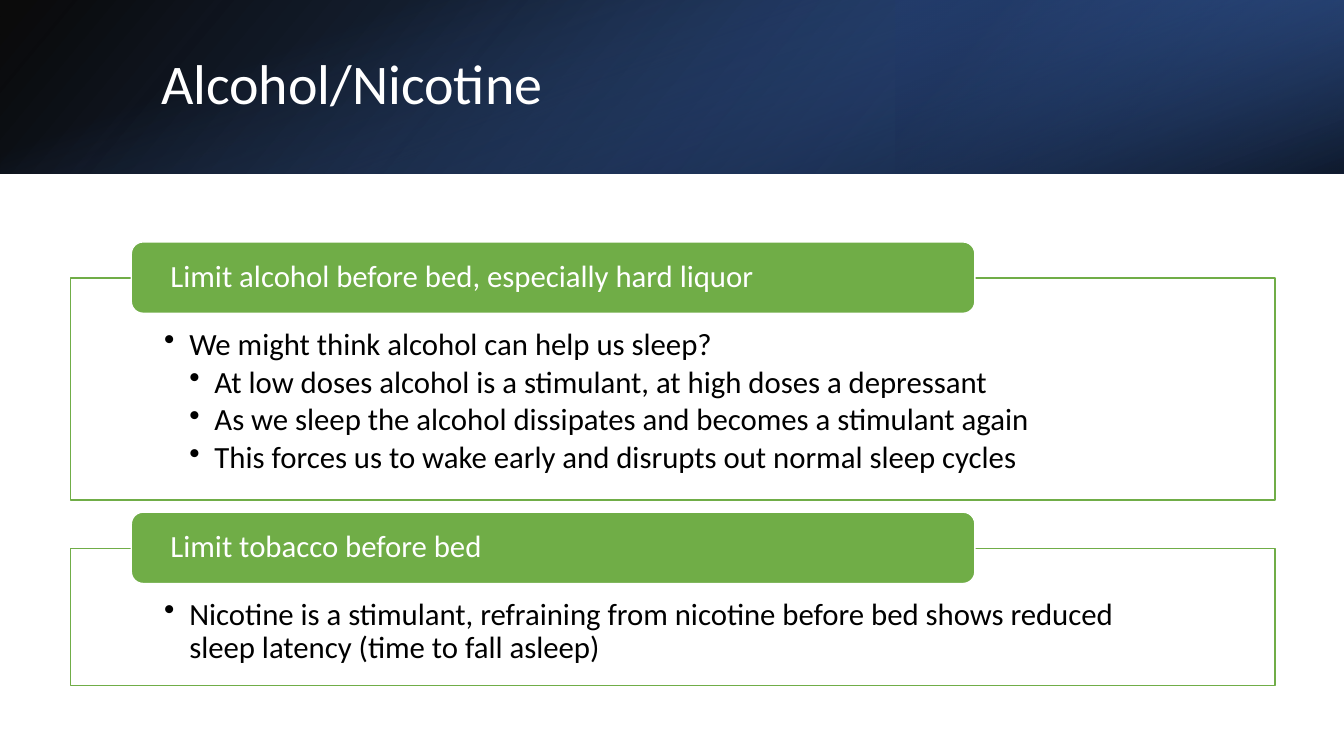
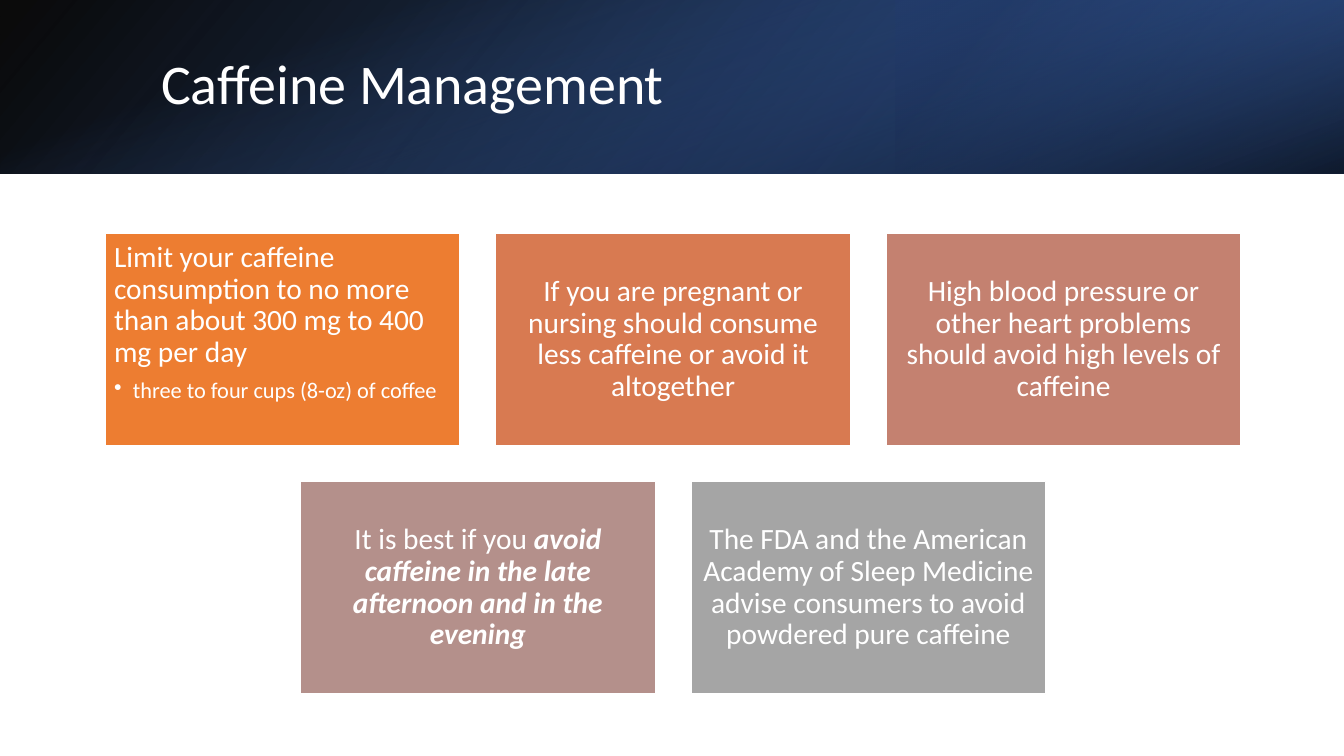
import lxml.etree
import pptx
import pptx.dml.color
import pptx.enum.shapes
import pptx.enum.text
import pptx.oxml.ns
import pptx.util

Pt = pptx.util.Pt
qn = pptx.oxml.ns.qn
rgb = pptx.dml.color.RGBColor.from_string
KIND = pptx.enum.shapes.MSO_SHAPE
ALIGN = pptx.enum.text.PP_ALIGN
ANCHOR = pptx.enum.text.MSO_ANCHOR

FONT = "Calibri"
WHITE, BLACK, GREEN = "FFFFFF", "000000", "70AD47"
WIDE, HIGH, BAND = 960, 540, 124

# Title band layers: place, turn, flip, angle, stops (position, colour, opacity)
LAYERS = [
    ((0, 0, WIDE, BAND), 0, True, 140, [(0, BLACK, 96), (100, "2F5597", 100)]),
    ((640, 0, 320, BAND), 180, True, 320, [(19, "203864", 68), (100, "4472C4", 79)]),
    (((WIDE - BAND) / 2, (BAND - WIDE) / 2, BAND, WIDE), 90, False, 340,
     [(23, "4472C4", 0), (99, BLACK, 74)]),
]


def draw(slide, place, fill=None, line=None, kind=KIND.RECTANGLE):
    shape = slide.shapes.add_shape(kind, *[Pt(n) for n in place])
    shape.shadow.inherit = False
    if fill:
        shape.fill.solid()
        shape.fill.fore_color.rgb = rgb(fill)
    if line:
        shape.line.color.rgb = rgb(line)
        shape.line.width = Pt(1)
    else:
        shape.line.fill.background()
    return shape


def write(shape, paras, color, inset, anchor=ANCHOR.MIDDLE, align=ALIGN.LEFT, after=0):
    """Each paragraph is (text, size, left margin, hanging indent)."""
    frame = shape.text_frame
    frame.word_wrap = True
    frame.vertical_anchor = anchor
    (frame.margin_left, frame.margin_top,
     frame.margin_right, frame.margin_bottom) = [Pt(n) for n in inset]
    for i, (text, size, left, hang) in enumerate(paras):
        para = frame.paragraphs[0] if i == 0 else frame.add_paragraph()
        para.text = text
        para.alignment = align
        para.line_spacing = 0.9
        para.space_after = Pt(after if i < len(paras) - 1 else 0)
        if hang:
            props = para._p.get_or_add_pPr()
            props.set("marL", str(Pt(left)))
            props.set("indent", str(-Pt(hang)))
            lxml.etree.SubElement(props, qn("a:buChar"), char="•")
        for run in para.runs:
            run.font.name = FONT
            run.font.size = Pt(size)
            run.font.color.rgb = rgb(color)


deck = pptx.Presentation()
deck.slide_width, deck.slide_height = Pt(WIDE), Pt(HIGH)

# Shared band and title
slides = []
for title in ["Alcohol/Nicotine", "Caffeine Management"]:
    slide = deck.slides.add_slide(deck.slide_layouts[6])
    slides.append(slide)
    for place, turn, flip, angle, stops in LAYERS:
        layer = draw(slide, place)
        layer.rotation = turn
        if flip:
            layer._element.spPr.xfrm.set("flipH", "1")
        layer.fill.gradient()
        layer.fill.gradient_angle = 360 - angle
        for stop, (pos, color, _) in zip(layer.fill.gradient_stops, stops):
            stop.position = pos / 100
            stop.color.rgb = rgb(color)
        for tint, (_, _, alpha) in zip(layer._element.spPr.iter(qn("a:srgbClr")), stops):
            lxml.etree.SubElement(tint, qn("a:alpha"), val=str(alpha * 1000))
    head = slide.shapes.add_textbox(Pt(108), Pt(27.4), Pt(790), Pt(69))
    write(head, [(title, 40, 0, 0)], WHITE, (7.2, 3.6, 7.2, 3.6))

# Slide 1: framed lists with green headings
cards = [
    ("Limit alcohol before bed, especially hard liquor", 158.4, [
        ("We might think alcohol can help us sleep?", 1),
        ("At low doses alcohol is a stimulant, at high doses a depressant", 2),
        ("As we sleep the alcohol dissipates and becomes a stimulant again", 2),
        ("This forces us to wake early and disrupts out normal sleep cycles", 2)]),
    ("Limit tobacco before bed", 98, [
        ("Nicotine is a stimulant, refraining from nicotine before bed shows "
         "reduced sleep latency (time to fall asleep)", 1)]),
]
top = 172.8
for label, tall, points in cards:
    card = draw(slides[0], (50.4, top + 25.9, 860.4, tall), WHITE, GREEN)
    tint = card._element.spPr.find(qn("a:solidFill")).find(qn("a:srgbClr"))
    lxml.etree.SubElement(tint, qn("a:alpha"), val="90000")
    write(card, [(text, 22, 18 * level, 18) for text, level in points], BLACK,
          (66.8, 36, 66.8, 12), ANCHOR.TOP, after=3.3)
    tab = draw(slides[0], (93.8, top, 602.6, 51), GREEN, WHITE, KIND.ROUNDED_RECTANGLE)
    write(tab, [(label, 22, 0, 0)], WHITE, (25.5, 0, 25.5, 0))
    top += 25.9 + tall + 8.7

# Slide 2: rows of tiles, each row centred
TILE_W, TILE_H, GAP, MID = 253.5, 152, 25.4, 480.8
rows = [
    [("ED7D31", "Limit your caffeine consumption to no more than about 300 mg to 400 mg per day"),
     ("D87A51", "If you are pregnant or nursing should consume less caffeine or avoid it altogether"),
     ("C48170", "High blood pressure or other heart problems should avoid high levels of caffeine")],
    [("B4908B", "It is best if you "),
     ("A5A5A5", "The FDA and the American Academy of Sleep Medicine advise consumers "
                "to avoid powdered pure caffeine")],
]
tiles = []
for r, row in enumerate(rows):
    left = MID - (len(row) * (TILE_W + GAP) - GAP) / 2
    for c, (color, text) in enumerate(row):
        place = (left + c * (TILE_W + GAP), 166.5 + r * (TILE_H + GAP), TILE_W, TILE_H)
        tile = draw(slides[1], place, color, WHITE)
        paras, anchor, align = [(text, 21, 0, 0)], ANCHOR.MIDDLE, ALIGN.CENTER
        if not tiles:
            paras.append(("three to four cups (8-oz) of coffee", 16, 13.5, 13.5))
            anchor, align = ANCHOR.TOP, ALIGN.LEFT
        write(tile, paras, WHITE, (6.3,) * 4, anchor, align, after=7.3)
        tiles.append(tile)

# Emphasis in the fourth tile
run = tiles[3].text_frame.paragraphs[0].add_run()
run.text = "avoid caffeine in the late afternoon and in the evening"
run.font.name = FONT
run.font.size = Pt(21)
run.font.color.rgb = rgb(WHITE)
run.font.bold = run.font.italic = True

deck.save("out.pptx")
